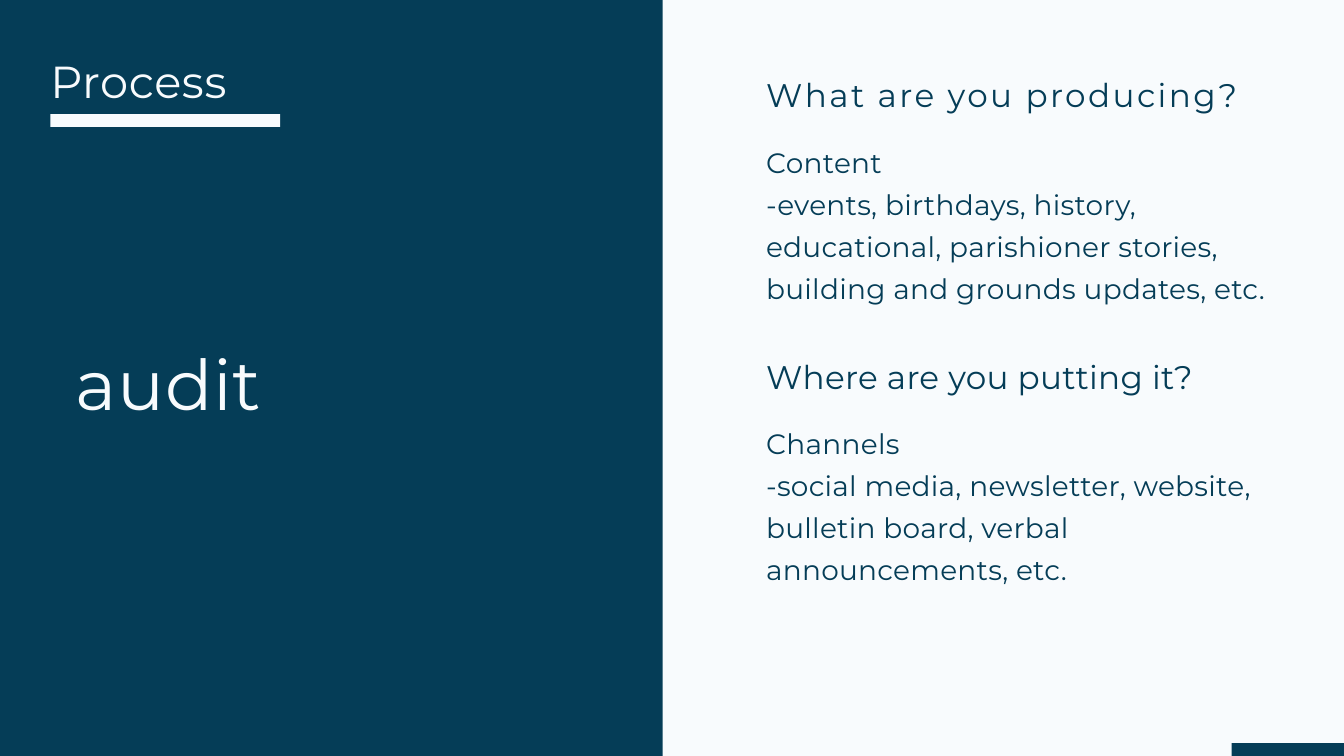
from dataclasses import dataclass

from pptx import Presentation
from pptx.dml.color import RGBColor
from pptx.enum.shapes import MSO_SHAPE
from pptx.enum.text import MSO_ANCHOR, MSO_AUTO_SIZE, PP_ALIGN
from pptx.shapes.autoshape import Shape
from pptx.slide import Slide
from pptx.util import Inches, Pt

NAVY = RGBColor(0x05, 0x3D, 0x57)
PALE = RGBColor(0xF8, 0xFB, 0xFD)
FONT = "Montserrat"

# The grid has square cells of one inch
CELL = Inches(1)
COLUMNS, ROWS = 20, 11.25
MARGIN = 0.75
PANEL_LEFT = 9.86
BODY_LEFT, BODY_WIDTH = 11.4, 7.48
TITLE_WIDTH = 7.37
BAR_HEIGHT = 0.19
CORNER_LEFT = 18.33


@dataclass(frozen=True)
class Box:
    column: float
    row: float
    columns: float
    rows: float

    def place(self) -> tuple[int, int, int, int]:
        lengths = (self.column, self.row, self.columns, self.rows)
        return tuple(round(length * CELL) for length in lengths)


@dataclass(frozen=True)
class Line:
    text: str
    size: float
    leading: float
    before: float = 0


def add_bar(slide: Slide, box: Box, color: RGBColor) -> None:
    shape = slide.shapes.add_shape(MSO_SHAPE.RECTANGLE, *box.place())
    shape.shadow.inherit = False
    shape.fill.solid()
    shape.fill.fore_color.rgb = color
    shape.line.fill.background()


def write(shape: Shape, lines: list[Line], *, color: RGBColor, tracking: float) -> None:
    frame = shape.text_frame
    frame.word_wrap = True
    frame.auto_size = MSO_AUTO_SIZE.NONE
    frame.vertical_anchor = MSO_ANCHOR.TOP
    frame.margin_left = frame.margin_top = frame.margin_right = frame.margin_bottom = 0
    for index, line in enumerate(lines):
        paragraph = frame.add_paragraph() if index else frame.paragraphs[0]
        paragraph.alignment = PP_ALIGN.LEFT
        paragraph.line_spacing = Pt(line.leading)
        if line.before:
            paragraph.space_before = Pt(line.before)
        run = paragraph.add_run()
        run.text = line.text
        run.font.name = FONT
        run.font.size = Pt(line.size)
        run.font.color.rgb = color
        # Letter spacing is stored in hundredths of a point
        run._r.get_or_add_rPr().set("spc", str(round(tracking * 100)))


def add_text(slide: Slide, box: Box, lines: list[Line], *, color: RGBColor, tracking: float) -> None:
    shape = slide.shapes.add_textbox(*box.place())
    write(shape, lines, color=color, tracking=tracking)


def main() -> None:
    presentation = Presentation()
    presentation.slide_width = round(COLUMNS * CELL)
    presentation.slide_height = round(ROWS * CELL)
    slide = presentation.slides.add_slide(presentation.slide_layouts[5])
    slide.background.fill.solid()
    slide.background.fill.fore_color.rgb = NAVY

    # Right panel with its two questions
    add_bar(slide, Box(PANEL_LEFT, 0, COLUMNS - PANEL_LEFT, ROWS), PALE)
    add_text(slide, Box(BODY_LEFT, 1.12, BODY_WIDTH, 0.58),
             [Line("What are you producing?", 35, 42)], color=NAVY, tracking=2.6)
    answers = [
        Line("Content", 30, 45),
        Line("-events, birthdays, history, educational, parishioner stories, "
             "building and grounds updates, etc.", 30, 45),
        Line("Where are you putting it?", 35, 52.5, before=45),
        Line("Channels", 30, 45, before=24),
        Line("-social media, newsletter, website, bulletin board, "
             "verbal announcements, etc.", 30, 45),
    ]
    add_text(slide, Box(BODY_LEFT, 2.04, BODY_WIDTH, 6.64), answers, color=NAVY, tracking=0.3)

    # Left side: title, its underline and the step
    title = slide.shapes.title
    title.left, title.top, title.width, title.height = Box(MARGIN, 0.28, TITLE_WIDTH, 1.17).place()
    write(title, [Line("Process", 48, 94.5)], color=PALE, tracking=0.7)
    add_bar(slide, Box(MARGIN, 1.7, 3.42, BAR_HEIGHT), PALE)
    add_text(slide, Box(1.13, 5, TITLE_WIDTH, 1.26),
             [Line("audit", 75, 94.5)], color=PALE, tracking=0.7)

    # Corner accent
    add_bar(slide, Box(CORNER_LEFT, ROWS - BAR_HEIGHT, COLUMNS - CORNER_LEFT, BAR_HEIGHT), NAVY)

    presentation.save("out.pptx")


if __name__ == "__main__":
    main()
